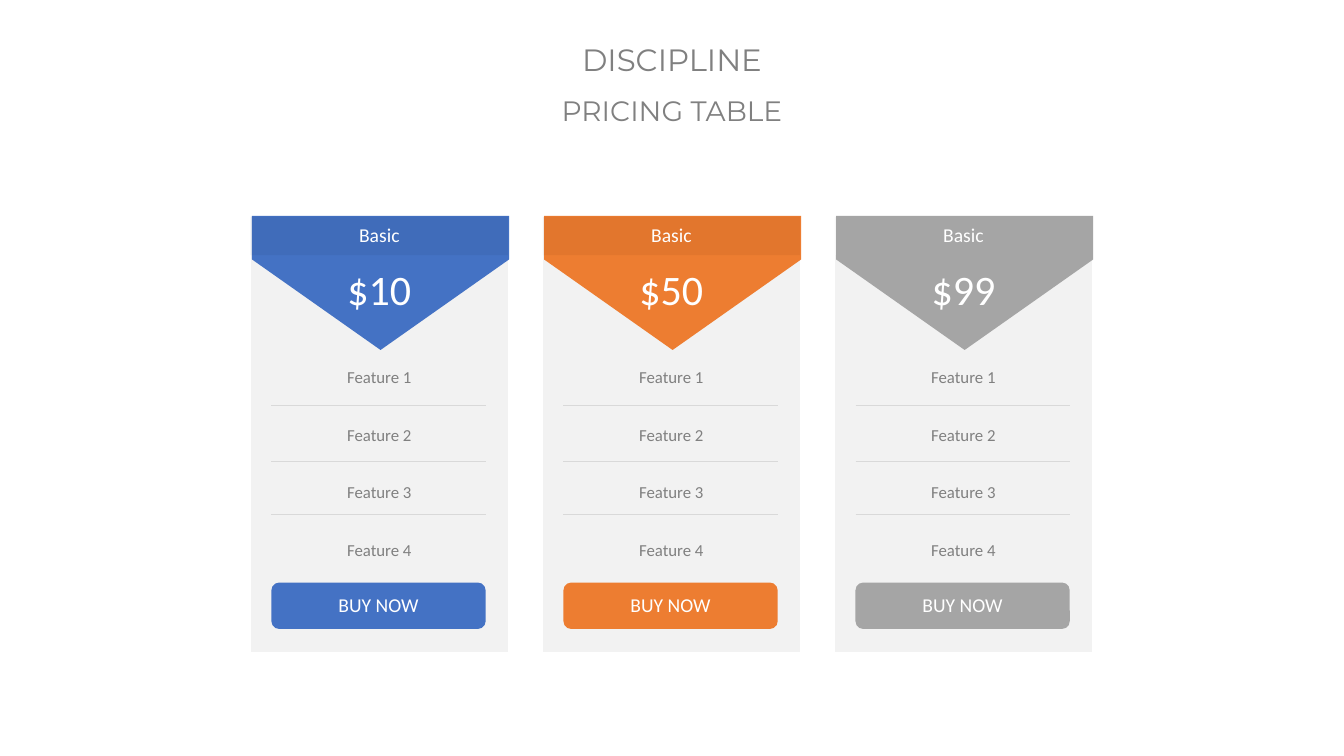
from pptx import Presentation
from pptx.dml.color import RGBColor
from pptx.enum.shapes import MSO_CONNECTOR, MSO_SHAPE as Preset
from pptx.enum.text import MSO_ANCHOR as Anchor, MSO_AUTO_SIZE as AutoSize, PP_ALIGN as Align
from pptx.oxml.ns import qn
from pptx.util import Cm, Pt
from lxml.etree import SubElement

# Colours
WHITE = RGBColor(0xFF, 0xFF, 0xFF)
GREY_TEXT = RGBColor(0x80, 0x80, 0x80)
PANEL = RGBColor(0xF2, 0xF2, 0xF2)
RULE = RGBColor(0xD9, 0xD9, 0xD9)
BLUE = RGBColor(0x44, 0x72, 0xC4)
ORANGE = RGBColor(0xED, 0x7D, 0x31)
GREY = RGBColor(0xA5, 0xA5, 0xA5)
DARK_BLUE = RGBColor(0x20, 0x38, 0x64)
DARK_ORANGE = RGBColor(0x84, 0x3C, 0x0B)
LIGHT_GREY = RGBColor(0xAE, 0xAE, 0xAE)

# Content: heading is (text, size, top, width, height)
HEADING = [
    ("DISCIPLINE", 22, 0.89, 5.11, 1.19),
    ("PRICING TABLE", 20, 2.21, 6.15, 1.12),
]
# Each plan is (name, price, colour, band tint)
PLANS = [
    ("Basic", "$10", BLUE, DARK_BLUE),
    ("Basic", "$50", ORANGE, DARK_ORANGE),
    ("Basic", "$99", GREY, LIGHT_GREY),
]
FEATURES = ["Feature 1", "Feature 2", "Feature 3", "Feature 4"]
BUTTON = "BUY NOW"

# Layout in centimetres
SLIDE_W, SLIDE_H = 33.87, 19.05
FIRST_LEFT, PITCH, CARD_W = 6.32, 7.36, 6.48
BANNER_TOP, BANNER_H = 5.44, 3.38
PANEL_TOP, PANEL_H = 6.43, 10
FEATURE_TOP, FEATURE_STEP = 9.12, 1.45
RULE_TOPS = [10.21, 11.63, 12.95]
INNER_W = 5.4

deck = Presentation()
deck.slide_width, deck.slide_height = Cm(SLIDE_W), Cm(SLIDE_H)
page = deck.slides.add_slide(deck.slide_layouts[6])


def write(shape, text, size, color, font="Calibri", spacing=None):
    para = shape.text_frame.paragraphs[0]
    para.alignment = Align.CENTER
    if spacing:
        para.line_spacing = spacing
    span = para.add_run()
    span.text = text
    span.font.size = Pt(size)
    span.font.name = font
    span.font.color.rgb = color


def add_label(center, top, width, height, text, size, color, anchor=Anchor.TOP, **style):
    box = page.shapes.add_textbox(Cm(center - width / 2), Cm(top), Cm(width), Cm(height))
    box.text_frame.word_wrap = False
    box.text_frame.auto_size = AutoSize.SHAPE_TO_FIT_TEXT
    box.text_frame.vertical_anchor = anchor
    write(box, text, size, color, **style)


def add_block(preset, center, top, width, height, color):
    block = page.shapes.add_shape(
        preset, Cm(center - width / 2), Cm(top), Cm(width), Cm(height))
    block.shadow.inherit = False
    block.fill.solid()
    block.fill.fore_color.rgb = color
    block.line.fill.background()
    return block


def add_rule(center, top):
    rule = page.shapes.add_connector(
        MSO_CONNECTOR.STRAIGHT, Cm(center - INNER_W / 2), Cm(top),
        Cm(center + INNER_W / 2), Cm(top))
    rule.line.color.rgb = RULE
    rule.line.width = Pt(0.5)
    SubElement(rule._element.spPr, qn("a:effectLst"))


def add_plan(center, name, price, color, tint):
    # Panel and downward-pointing banner
    add_block(Preset.FLOWCHART_PROCESS, center, PANEL_TOP, CARD_W, PANEL_H, PANEL)
    banner = add_block(Preset.PENTAGON, center + 0.03,
                       BANNER_TOP + (BANNER_H - CARD_W) / 2, BANNER_H, CARD_W, color)
    banner.rotation = 90
    banner.adjustments[0] = 0.675

    # Price and name on a translucent band
    add_label(center, 6.65, 2.4, 1.42, price, 30, WHITE, spacing=0.9)
    band = add_block(Preset.FLOWCHART_PROCESS, center, 5.46, CARD_W, 0.97, tint)
    tint_xml = band._element.spPr.find(qn("a:solidFill"))[0]
    SubElement(tint_xml, qn("a:alpha"), val="10000")
    add_label(center, 5.56, 1.83, 0.79, name, 14, WHITE, spacing=0.9)

    # Features and dividing rules
    for row, feature in enumerate(FEATURES):
        add_label(center, FEATURE_TOP + row * FEATURE_STEP, 2.54, 0.76,
                  feature, 12, GREY_TEXT)
    for top in RULE_TOPS:
        add_rule(center - 0.02, top)

    # Button
    button = add_block(Preset.ROUNDED_RECTANGLE, center - 0.02, 14.68, INNER_W, 1.17, color)
    button.text_frame.vertical_anchor = Anchor.MIDDLE
    write(button, BUTTON, 14, WHITE, spacing=0.9)


# Price cards
for column, plan in enumerate(PLANS):
    add_plan(FIRST_LEFT + column * PITCH + CARD_W / 2, *plan)

# Heading
for text, size, top, width, height in HEADING:
    add_label(SLIDE_W / 2, top, width, height, text, size, GREY_TEXT,
              anchor=Anchor.MIDDLE, font="Montserrat")

deck.save("out.pptx")
